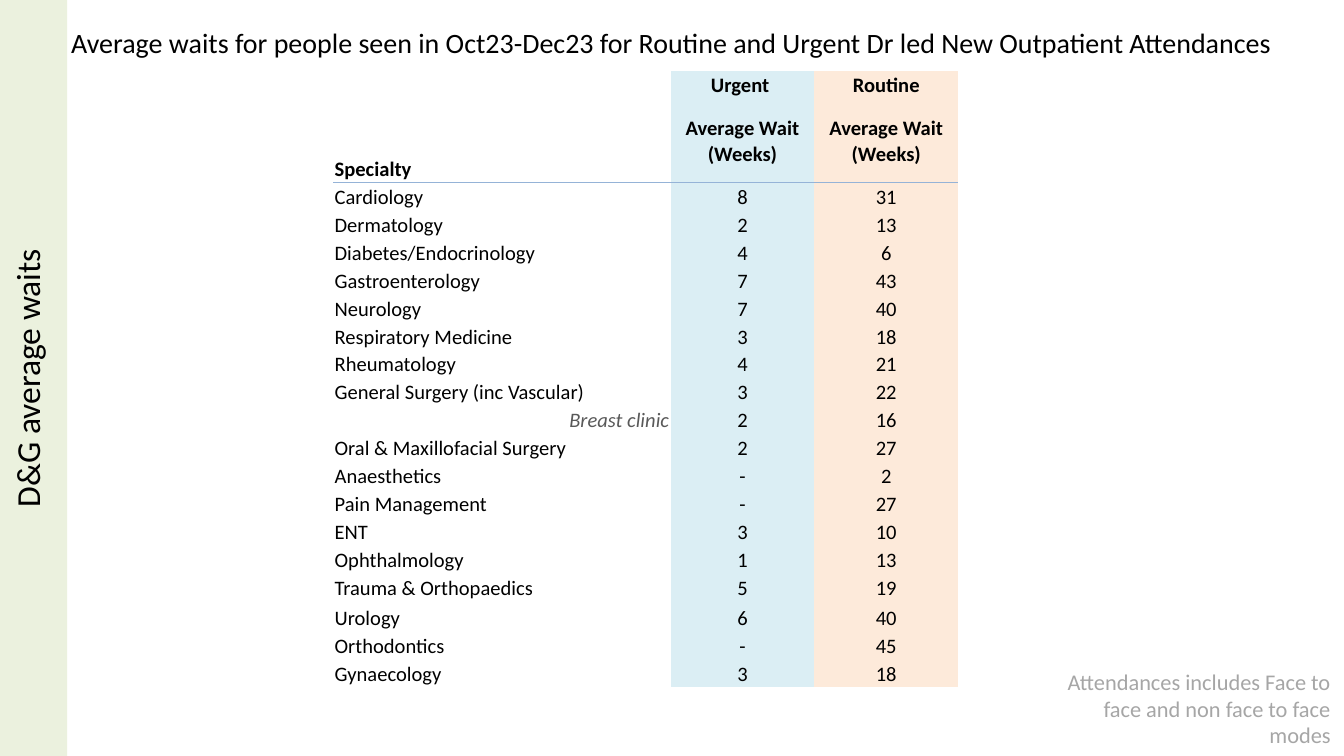
from typing import NamedTuple

from lxml.etree import SubElement
from pptx import Presentation
from pptx.dml.color import RGBColor
from pptx.enum.shapes import MSO_SHAPE as Preset
from pptx.enum.text import MSO_ANCHOR as Anchor, MSO_AUTO_SIZE as AutoSize, PP_ALIGN as Align
from pptx.oxml import parse_xml
from pptx.oxml.ns import nsdecls, qn
from pptx.util import Inches, Pt

FONT = "Calibri"
BLACK, WHITE, GREY, NOTE_GREY = "000000", "FFFFFF", "595959", "A6A6A6"
BAR_GREEN, URGENT_BLUE, ROUTINE_ORANGE, RULE_BLUE = "EBF1DE", "DBEEF4", "FDEADA", "95B3D7"
NO_STYLE = "{2D5ABB26-0587-4C30-8999-92F81FD0307C}"


class Wait(NamedTuple):
    specialty: str
    urgent: str
    routine: str
    is_subgroup: bool = False


WAITS = [
    Wait("Cardiology", "8", "31"),
    Wait("Dermatology", "2", "13"),
    Wait("Diabetes/Endocrinology", "4", "6"),
    Wait("Gastroenterology", "7", "43"),
    Wait("Neurology", "7", "40"),
    Wait("Respiratory Medicine", "3", "18"),
    Wait("Rheumatology", "4", "21"),
    Wait("General Surgery (inc Vascular)", "3", "22"),
    Wait(" Breast clinic", "2", "16", is_subgroup=True),
    Wait("Oral & Maxillofacial Surgery", "2", "27"),
    Wait("Anaesthetics", "-", "2"),
    Wait("Pain Management", "-", "27"),
    Wait("ENT", "3", "10"),
    Wait("Ophthalmology", "1", "13"),
    Wait("Trauma & Orthopaedics", "5", "19"),
    Wait("Urology", "6", "40"),
    Wait("Orthodontics", "-", "45"),
    Wait("Gynaecology", "3", "18"),
]
HEADERS = [
    ("", "Urgent ", "Routine"),
    ("Specialty", "Average Wait (Weeks)", "Average Wait (Weeks)"),
]
SLIDE_WIDTH = Inches(10)
SLIDE_HEIGHT = SLIDE_WIDTH * 9 // 16
TABLE_HEIGHT = 4.59
COLUMN_WIDTHS = (2.51, 1.07, 1.07)
SPECIAL_HEIGHTS = {1: 0.62, 17: 0.23}


def color(hex_code: str) -> RGBColor:
    return RGBColor.from_string(hex_code)


def write(frame, text: str, *, size: float, hue: str = BLACK, align=Align.LEFT,
          bold: bool = False, italic: bool = False) -> None:
    paragraph = frame.paragraphs[0]
    paragraph.alignment = align
    if not text:
        # Keeps an empty cell from growing to the default text size
        SubElement(paragraph._p, qn("a:endParaRPr")).set("sz", str(int(size * 100)))
        return
    run = paragraph.add_run()
    run.text = text
    run.font.name, run.font.size = FONT, Pt(size)
    run.font.bold, run.font.italic = bold, italic
    run.font.color.rgb = color(hue)


def set_edge(cell, side: str, hue: str | None) -> None:
    """Rule side "T" or "B" of a cell, or clear it if hue is None; set "B" before "T"."""
    paint = (f'<a:solidFill><a:srgbClr val="{hue}"/></a:solidFill>' if hue
             else "<a:noFill/>")
    edge = parse_xml(f'<a:ln{side} {nsdecls("a")} w="{Pt(0.5)}">{paint}</a:ln{side}>')
    cell._tc.get_or_add_tcPr().insert(0, edge)


def fill_cell(cell, text: str, *, fill: str | None, anchor, **text_format) -> None:
    cell.margin_left = cell.margin_right = cell.margin_top = Inches(0.01)
    cell.margin_bottom = 0
    cell.vertical_anchor = anchor
    if fill:
        cell.fill.solid()
        cell.fill.fore_color.rgb = color(fill)
    else:
        cell.fill.background()
    write(cell.text_frame, text, size=11, **text_format)


def add_waits_table(slide) -> None:
    row_count = len(HEADERS) + len(WAITS)
    table = slide.shapes.add_table(
        row_count, 3, Inches(2.48), Inches(0.53),
        Inches(sum(COLUMN_WIDTHS)), Inches(TABLE_HEIGHT)).table
    table.first_row = table.horz_banding = False
    table._tbl.tblPr.find(qn("a:tableStyleId")).text = NO_STYLE

    for column, width in zip(table.columns, COLUMN_WIDTHS):
        column.width = Inches(width)
    plain_height = ((TABLE_HEIGHT - sum(SPECIAL_HEIGHTS.values()))
                    / (row_count - len(SPECIAL_HEIGHTS)))
    for index, row in enumerate(table.rows):
        row.height = Inches(SPECIAL_HEIGHTS.get(index, plain_height))

    for r, labels in enumerate(HEADERS):
        for c, fill in enumerate((WHITE, URGENT_BLUE, ROUTINE_ORANGE)):
            fill_cell(table.cell(r, c), labels[c], fill=fill, bold=True,
                      anchor=Anchor.MIDDLE if c else Anchor.BOTTOM,
                      align=Align.CENTER if c else Align.LEFT)

    for r, wait in enumerate(WAITS, start=len(HEADERS)):
        fill_cell(table.cell(r, 0), wait.specialty, fill=None, anchor=Anchor.BOTTOM,
                  italic=wait.is_subgroup, hue=GREY if wait.is_subgroup else BLACK,
                  align=Align.RIGHT if wait.is_subgroup else Align.LEFT)
        for c, weeks, fill in ((1, wait.urgent, URGENT_BLUE), (2, wait.routine, ROUTINE_ORANGE)):
            fill_cell(table.cell(r, c), weeks, fill=fill, anchor=Anchor.BOTTOM,
                      align=Align.CENTER)

    first_wait = len(HEADERS)
    for c in range(3):
        set_edge(table.cell(first_wait - 1, c), "B", RULE_BLUE)
        set_edge(table.cell(first_wait, c), "B", None)
        set_edge(table.cell(first_wait, c), "T", RULE_BLUE)
        set_edge(table.cell(first_wait + 1, c), "T", None)


def add_side_bar(slide) -> None:
    bar = slide.shapes.add_shape(Preset.RECTANGLE, 0, 0, Inches(0.5), SLIDE_HEIGHT)
    bar.shadow.inherit = False
    bar.fill.solid()
    bar.fill.fore_color.rgb = color(BAR_GREEN)
    bar.line.fill.background()
    frame = bar.text_frame
    frame.vertical_anchor = Anchor.TOP
    frame.auto_size = AutoSize.SHAPE_TO_FIT_TEXT
    frame._txBody.bodyPr.set("vert", "vert270")
    write(frame, "D&G average waits", size=18, align=Align.CENTER)


def place_heading(slide) -> None:
    heading = slide.shapes.title
    heading.left, heading.top = Inches(0.43), Inches(0.14)
    heading.width, heading.height = Inches(9.57), Inches(0.35)
    frame = heading.text_frame
    frame.auto_size = AutoSize.SHAPE_TO_FIT_TEXT
    frame.vertical_anchor = Anchor.TOP
    write(frame, "Average waits for people seen in Oct23-Dec23 for Routine and Urgent "
                 "Dr led New Outpatient Attendances", size=15)


def add_footnote(slide) -> None:
    footnote = slide.shapes.add_textbox(Inches(7.76), Inches(4.92), Inches(2.24), Inches(0.71))
    frame = footnote.text_frame
    frame.word_wrap = True
    frame.auto_size = AutoSize.SHAPE_TO_FIT_TEXT
    write(frame, "Attendances includes Face to face and non face to face modes",
          size=12, hue=NOTE_GREY, align=Align.RIGHT)


def main() -> None:
    deck = Presentation()
    deck.slide_width, deck.slide_height = SLIDE_WIDTH, SLIDE_HEIGHT
    slide = deck.slides.add_slide(deck.slide_layouts[5])
    add_side_bar(slide)
    place_heading(slide)
    add_waits_table(slide)
    add_footnote(slide)
    deck.save("out.pptx")


if __name__ == "__main__":
    main()
